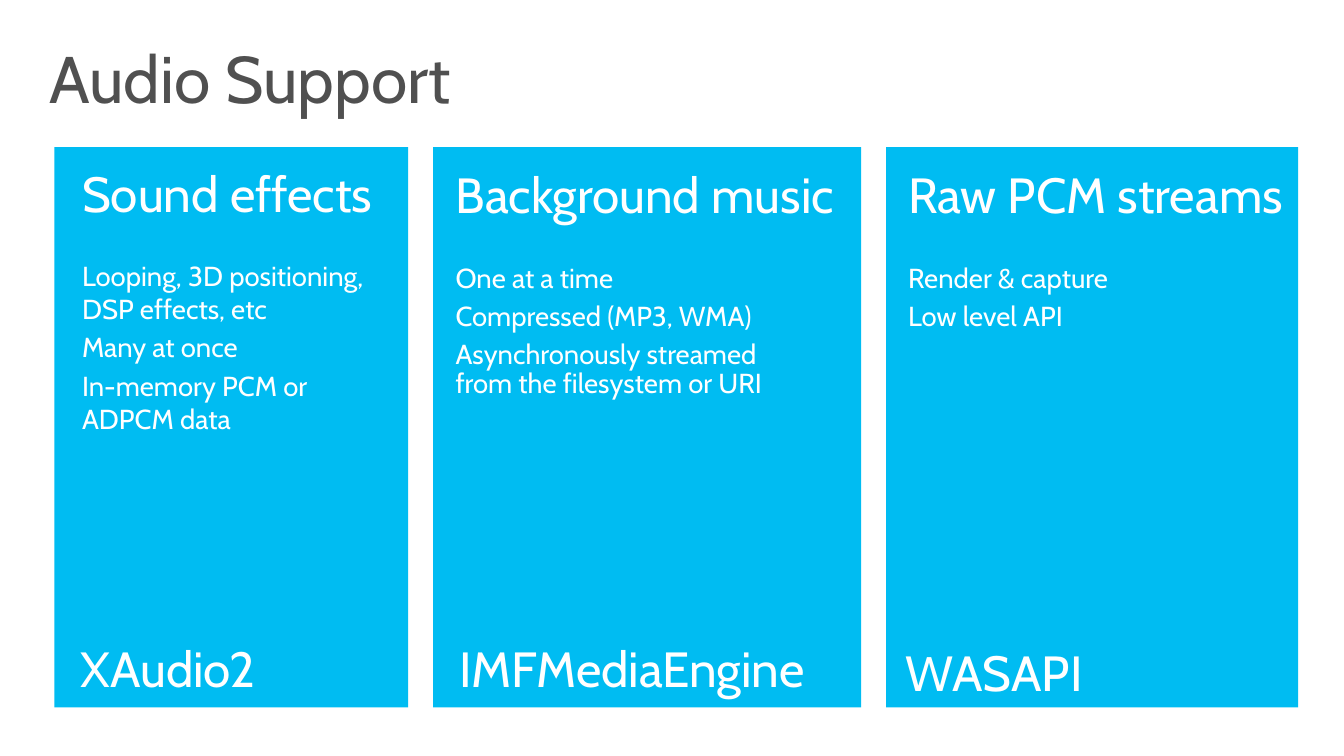
from dataclasses import dataclass

from pptx import Presentation
from pptx.dml.color import RGBColor
from pptx.enum.shapes import MSO_SHAPE
from pptx.enum.text import MSO_ANCHOR
from pptx.util import Pt


@dataclass(frozen=True)
class Theme:
    font: str = "Cabin"
    panel: RGBColor = RGBColor(0x00, 0xBC, 0xF2)
    title: RGBColor = RGBColor(0x50, 0x50, 0x50)
    text: RGBColor = RGBColor(0xFF, 0xFF, 0xFF)
    title_size: int = 48
    heading_size: int = 36
    body_size: int = 20


theme = Theme()


def add_text(box, inset, lines, color):
    """Add a text box; box is left, top, width, height and lines are (text, size)."""
    tf = s.shapes.add_textbox(*map(Pt, box)).text_frame
    tf.word_wrap = True
    tf.vertical_anchor = MSO_ANCHOR.TOP
    tf.margin_left = tf.margin_right = Pt(inset[0])
    tf.margin_top = tf.margin_bottom = Pt(inset[1])
    tf.text = "\n".join(text for text, size in lines)
    for p, (text, size) in zip(tf.paragraphs, lines):
        for r in p.runs:
            r.font.name = theme.font
            r.font.size = Pt(size)
            r.font.color.rgb = color
    return tf


prs = Presentation()
prs.slide_width, prs.slide_height = Pt(979.2), Pt(550.8)
s = prs.slides.add_slide(prs.slide_layouts[6])

add_text((21.6, 23.8, 936, 72), (14.4, 3.6),
         [("Audio Support", theme.title_size)], theme.title)

# Each panel: width, heading, points, API name
panels = [
    (257.8, "Sound effects",
     ["Looping, 3D positioning, DSP effects, etc", "Many at once",
      "In-memory PCM or\vADPCM data"], "XAudio2"),
    (311.8, "Background music",
     ["One at a time", "Compressed (MP3, WMA)",
      "Asynchronously streamed\vfrom the filesystem or URI"], "IMFMediaEngine"),
    (300.2, "Raw PCM streams",
     ["Render & capture", "Low level API"], "WASAPI"),
]
# Each body: box, inset, line spacing, space above the first point, space above the others
bodies = [
    ((45.4, 107.3, 252, 347.8), (14.4, 11.5), 1.0, 26.6, 4),
    ((321.8, 119.5, 298.8, 336.2), (10.1, 5), 0.9, 29.5, 6),
    ((651.6, 119.5, 301.7, 336.2), (10.1, 5), 0.9, 29.5, 6),
]
# Each API name: box
name_boxes = [
    (51.8, 461.5, 257.8, 51.1),
    (327.6, 461.5, 286.6, 51.1),
    (653, 464.4, 286.6, 51.1),
]

left, gap = 39.6, 18.2
for (width, heading, points, api), body, name_box in zip(panels, bodies, name_boxes):
    panel = s.shapes.add_shape(MSO_SHAPE.RECTANGLE, Pt(left), Pt(107.3), Pt(width), Pt(408.2))
    panel.shadow.inherit = False
    panel.fill.solid()
    panel.fill.fore_color.rgb = theme.panel
    panel.line.fill.background()
    left += width + gap

    box, inset, line_spacing, first_space, space = body
    lines = [(heading, theme.heading_size)] + [(point, theme.body_size) for point in points]
    tf = add_text(box, inset, lines, theme.text)
    for i, p in enumerate(tf.paragraphs):
        p.line_spacing = line_spacing
        if i:
            p.space_before = Pt(first_space if i == 1 else space)

    add_text(name_box, (7.2, 3.6), [(api, theme.heading_size)], theme.text)

prs.save("out.pptx")
